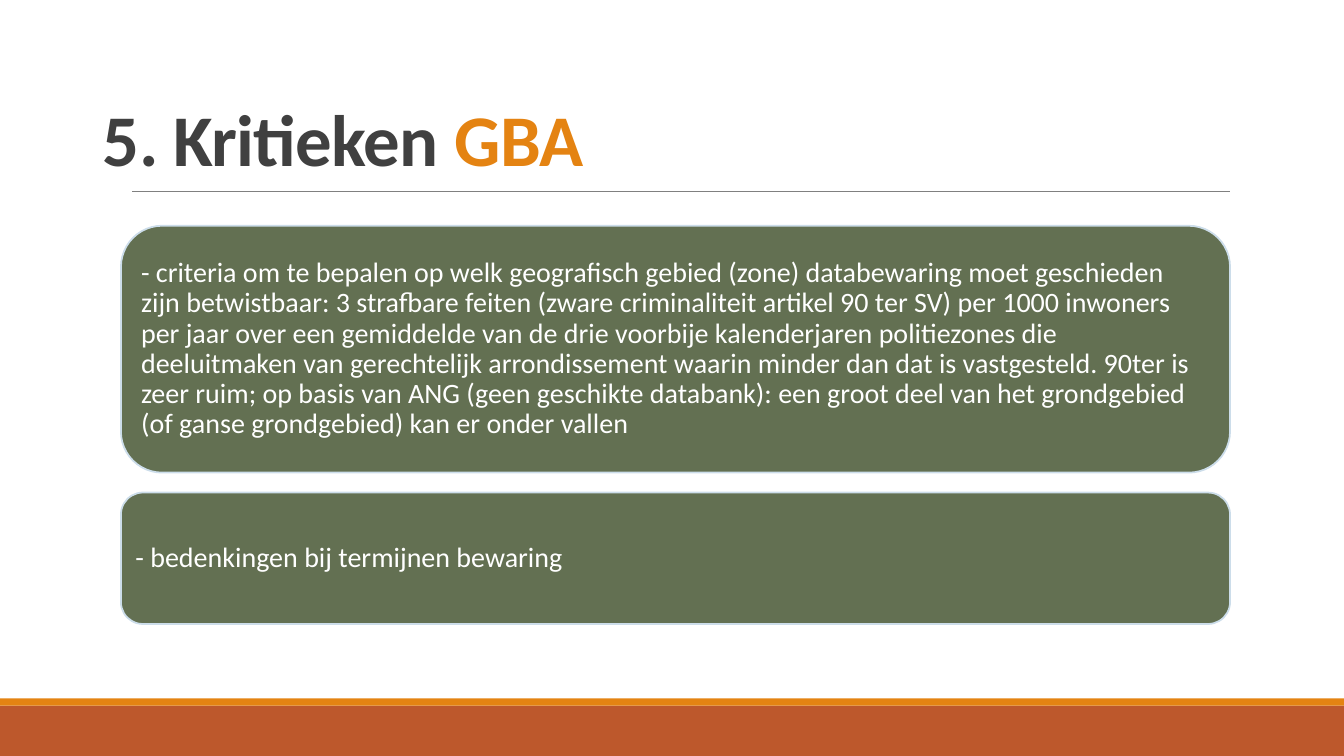
from dataclasses import dataclass

from lxml.etree import SubElement
from pptx import Presentation
from pptx.dml.color import RGBColor
from pptx.enum.shapes import MSO_CONNECTOR, MSO_SHAPE
from pptx.enum.text import MSO_ANCHOR, MSO_AUTO_SIZE, PP_ALIGN
from pptx.oxml.ns import qn
from pptx.util import Inches, Pt

# Content
HEADING = [("5. Kritieken ", "ink"), ("GBA", "accent")]
CRITIQUES = [  # text, share of the panel column's height
    ("- criteria om te bepalen op welk geografisch gebied (zone) databewaring moet "
     "geschieden zijn betwistbaar: 3 strafbare feiten (zware criminaliteit artikel 90 ter SV) "
     "per 1000 inwoners per jaar over een gemiddelde van de drie voorbije kalenderjaren "
     "politiezones die deeluitmaken van gerechtelijk arrondissement waarin minder dan dat is "
     "vastgesteld. 90ter is zeer ruim; op basis van ANG (geen geschikte databank): een groot "
     "deel van het grondgebied (of ganse grondgebied) kan er onder vallen", 0.62),
    ("- bedenkingen bij termijnen bewaring", 0.33),
]


@dataclass(frozen=True)
class Theme:
    font: str = "Calibri"
    ink: str = "404040"
    accent: str = "E48312"
    footer: str = "BD582C"
    rule: str = "808080"
    panel: str = "637052"
    panel_edge: str = "CCDDEA"
    panel_text: str = "FFFFFF"
    heading_size: float = 52
    panel_size: float = 20


THEME = Theme()
WIDTH, HEIGHT = 13.33, 7.5

# Layout in inches
FOOTER_TOP, STRIPE_HEIGHT = 7, 0.07
RULE_LEFT, RULE_RIGHT, RULE_TOP = 1.31, 12.2, 1.9
COLUMN_LEFT, COLUMN_TOP, COLUMN_WIDTH, COLUMN_HEIGHT = 1.2, 2.24, 11, 3.95
PANEL_GAP = COLUMN_HEIGHT * (1 - sum(share for _, share in CRITIQUES))
PANEL_INSET, PANEL_INSET_RIGHT = 0.08, 0.14


def rgb(value):
    return RGBColor.from_string(value)


def place(part, left, top, width, height):
    part.left, part.top = Inches(left), Inches(top)
    part.width, part.height = Inches(width), Inches(height)


def add_filled(slide, kind, box, fill):
    part = slide.shapes.add_shape(kind, *map(Inches, box))
    part.shadow.inherit = False
    part.fill.solid()
    part.fill.fore_color.rgb = rgb(fill)
    part.line.fill.background()
    return part


def style(run, size, color, bold=False):
    run.font.name, run.font.size, run.font.bold = THEME.font, Pt(size), bold
    run.font.color.rgb = rgb(color)


def add_frame(slide):
    """Footer bands and the rule under the heading."""
    add_filled(slide, MSO_SHAPE.RECTANGLE,
               (0, FOOTER_TOP, WIDTH, HEIGHT - FOOTER_TOP), THEME.footer)
    add_filled(slide, MSO_SHAPE.RECTANGLE,
               (0, FOOTER_TOP - STRIPE_HEIGHT, WIDTH, STRIPE_HEIGHT), THEME.accent)
    rule = slide.shapes.add_connector(
        MSO_CONNECTOR.STRAIGHT,
        *map(Inches, (RULE_LEFT, RULE_TOP, RULE_RIGHT, RULE_TOP)))
    rule.line.color.rgb, rule.line.width = rgb(THEME.rule), Pt(0.5)
    SubElement(rule._element.spPr, qn("a:effectLst"))


def add_heading(slide):
    heading = slide.shapes.title
    place(heading, 0.92, 0.61, 11.5, 1.24)
    frame = heading.text_frame
    frame.auto_size, frame.word_wrap = MSO_AUTO_SIZE.NONE, True
    frame.vertical_anchor = MSO_ANCHOR.BOTTOM
    line = frame.paragraphs[0]
    line.alignment, line.line_spacing = PP_ALIGN.LEFT, 0.85
    for words, color in HEADING:
        run = line.add_run()
        run.text = words
        style(run, THEME.heading_size, getattr(THEME, color), bold=True)
        run._r.get_or_add_rPr().set("spc", "-50")


def add_panel(slide, critique, top, height):
    panel = add_filled(slide, MSO_SHAPE.ROUNDED_RECTANGLE,
                       (COLUMN_LEFT, top, COLUMN_WIDTH, height), THEME.panel)
    panel.line.color.rgb, panel.line.width = rgb(THEME.panel_edge), Pt(1.25)
    frame = panel.text_frame
    frame.text, frame.word_wrap = critique, True
    frame.vertical_anchor = MSO_ANCHOR.MIDDLE
    frame.margin_left, frame.margin_right = Inches(PANEL_INSET), Inches(PANEL_INSET_RIGHT)
    frame.margin_top = frame.margin_bottom = Inches(PANEL_INSET)
    line = frame.paragraphs[0]
    line.alignment, line.line_spacing = PP_ALIGN.LEFT, 0.9
    style(line.runs[0], THEME.panel_size, THEME.panel_text)


def main():
    deck = Presentation()
    deck.slide_width, deck.slide_height = Inches(WIDTH), Inches(HEIGHT)
    slide = deck.slides.add_slide(deck.slide_layouts.get_by_name("Title Only"))
    add_frame(slide)
    add_heading(slide)

    # Critique panels stacked down the column
    top = COLUMN_TOP
    for critique, share in CRITIQUES:
        height = COLUMN_HEIGHT * share
        add_panel(slide, critique, top, height)
        top += height + PANEL_GAP
    deck.save("out.pptx")


if __name__ == "__main__":
    main()
